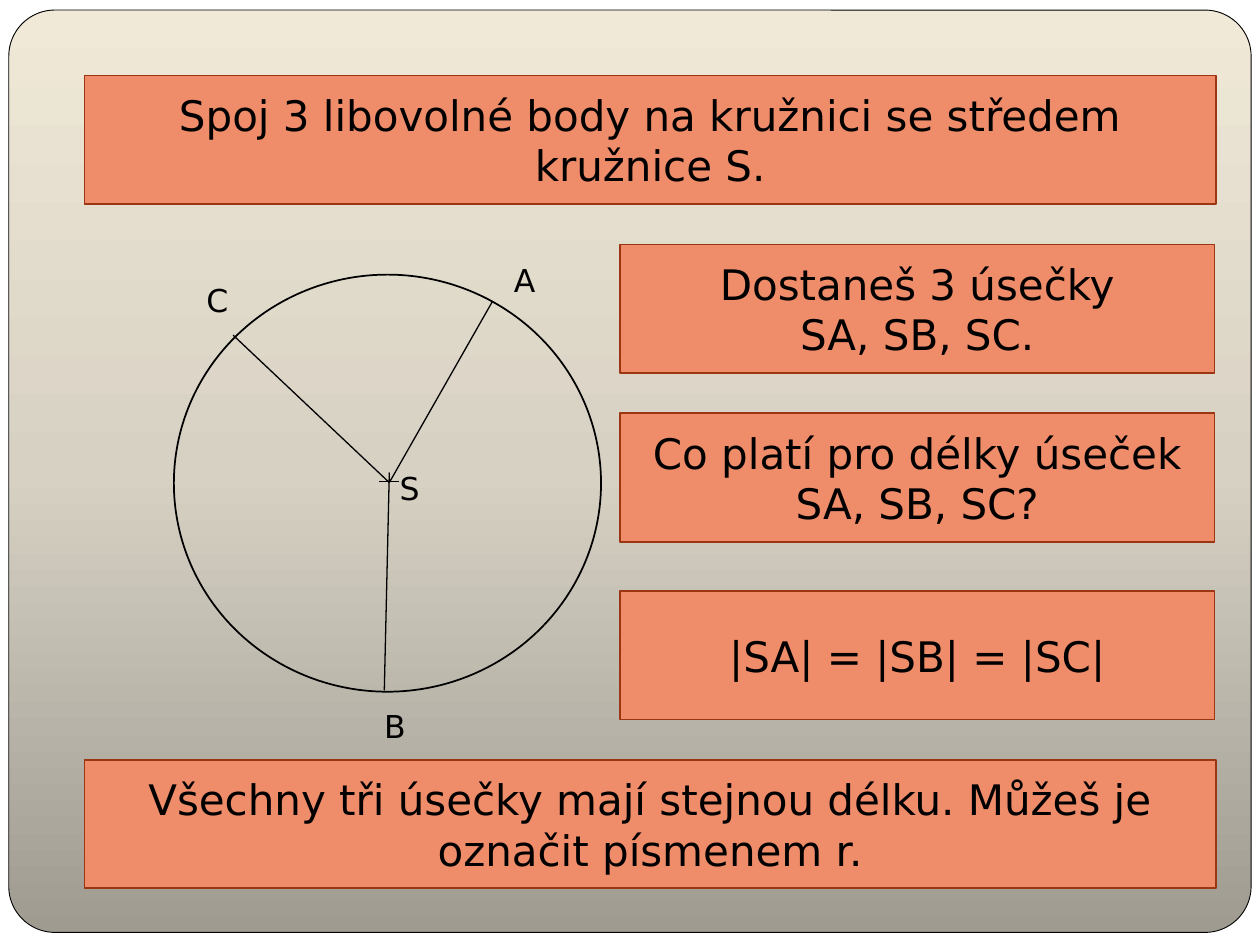
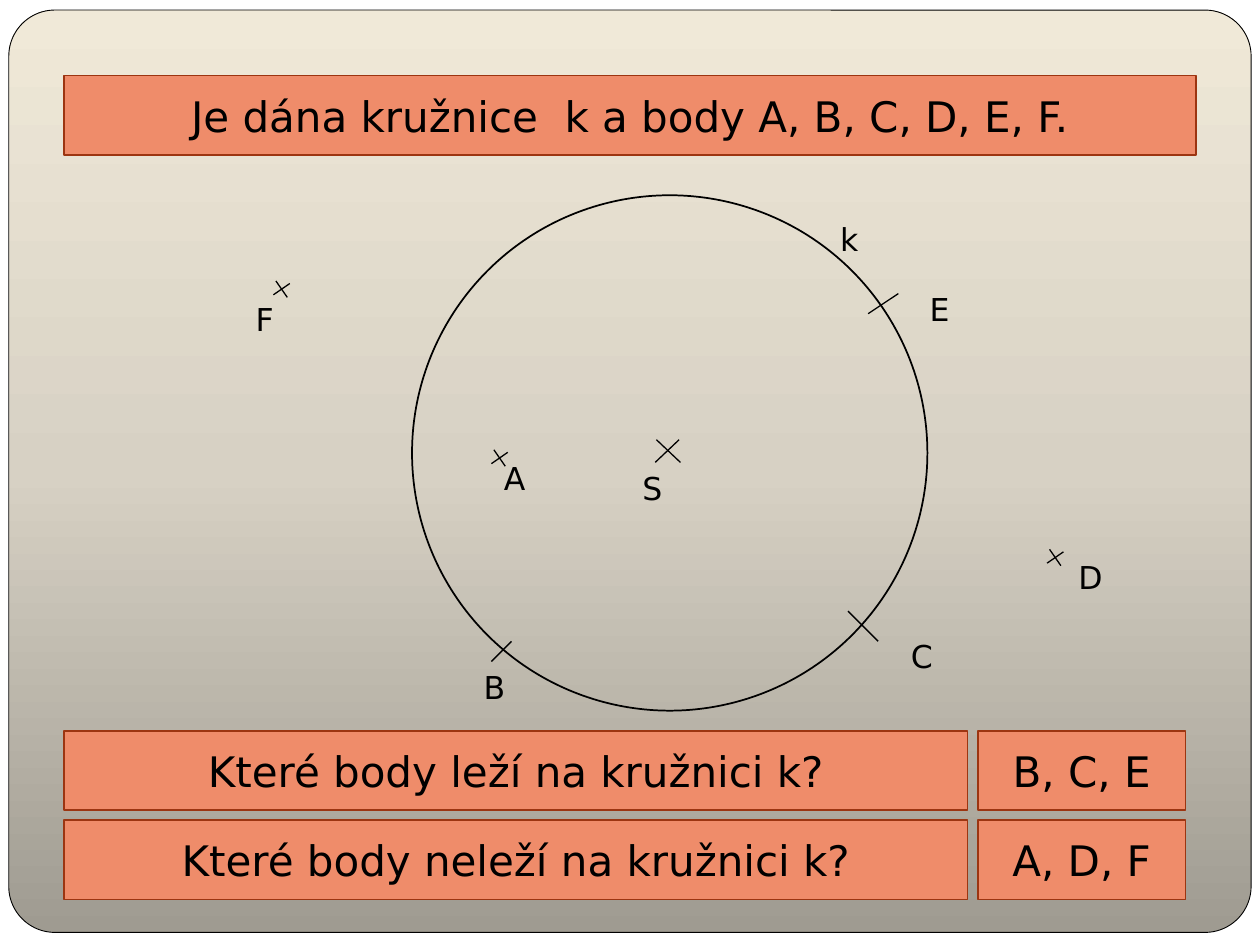
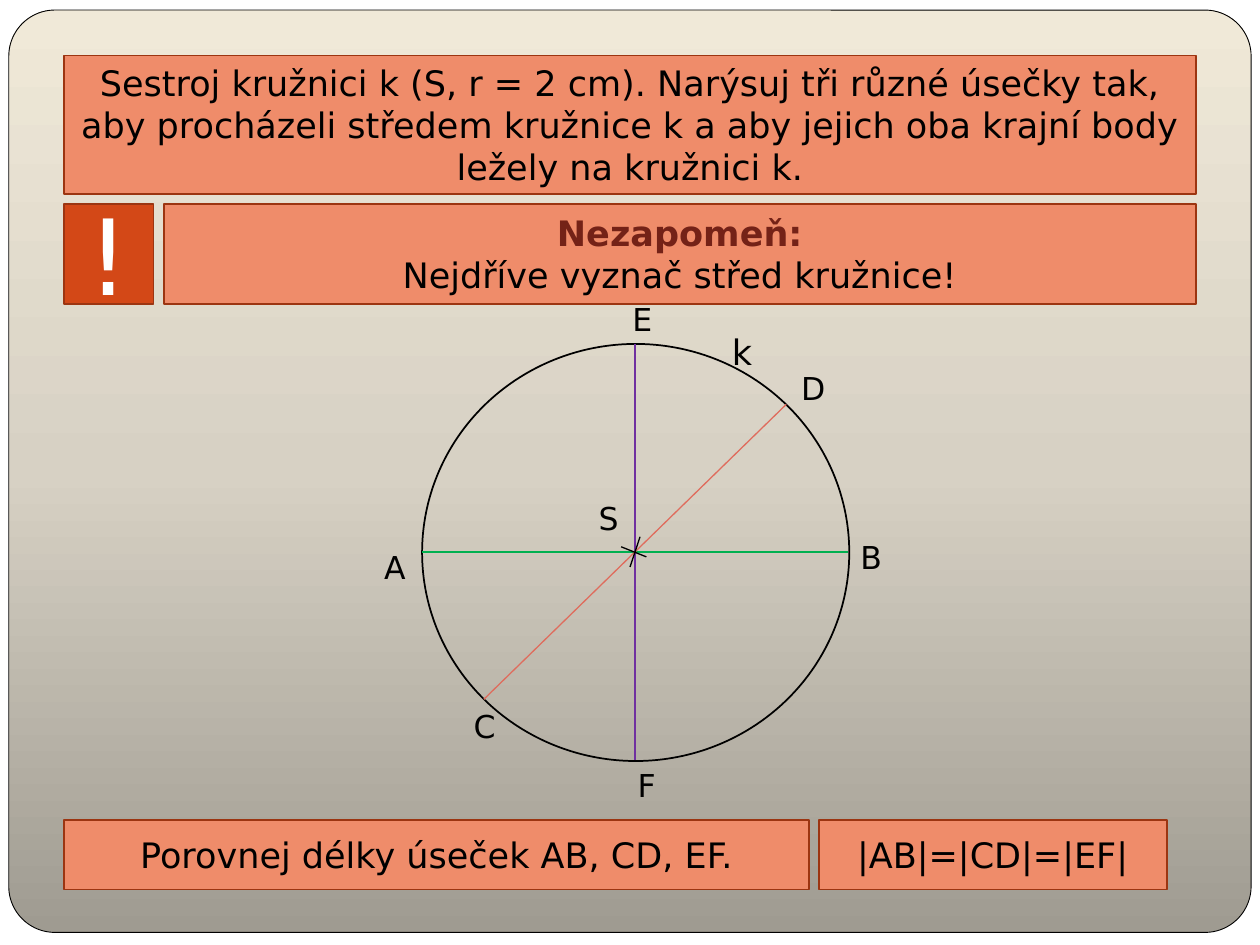
from copy import deepcopy
from typing import NamedTuple

from pptx import Presentation
from pptx.dml.color import RGBColor
from pptx.enum.shapes import MSO_CONNECTOR, MSO_SHAPE
from pptx.enum.text import MSO_ANCHOR, MSO_AUTO_SIZE, PP_ALIGN
from pptx.oxml.ns import qn
from pptx.oxml.xmlchemy import OxmlElement
from pptx.util import Inches, Pt

RECT, ROUND_RECT, OVAL = MSO_SHAPE.RECTANGLE, MSO_SHAPE.ROUNDED_RECTANGLE, MSO_SHAPE.OVAL
STRAIGHT = MSO_CONNECTOR.STRAIGHT
MIDDLE, CENTER = MSO_ANCHOR.MIDDLE, PP_ALIGN.CENTER
GROW = MSO_AUTO_SIZE.SHAPE_TO_FIT_TEXT

BLACK = RGBColor(0x00, 0x00, 0x00)
WHITE = RGBColor(0xFF, 0xFF, 0xFF)
SALMON = RGBColor(0xEF, 0x8C, 0x6A)
RUST = RGBColor(0x9C, 0x35, 0x11)
ORANGE = RGBColor(0xD3, 0x48, 0x17)
MAROON = RGBColor(0x74, 0x22, 0x17)
PURPLE = RGBColor(0x70, 0x30, 0xA0)
GREEN = RGBColor(0x00, 0xB0, 0x50)
RED = RGBColor(0xDF, 0x6C, 0x5D)
FRAME_STOPS = (
    (0, RGBColor(0x9F, 0x9B, 0x91)),
    (50, RGBColor(0xD7, 0xD1, 0xC4)),
    (100, RGBColor(0xF0, 0xE9, 0xD8)),
)

FONT = "DejaVu Sans"
LEFT, BAND_W = 0.51, 8.98


class Line(NamedTuple):
    text: str
    color: RGBColor = BLACK
    bold: bool = False


class Box(NamedTuple):
    x: float
    y: float
    w: float
    h: float
    lines: tuple[Line, ...]
    size: int = 24
    fill: RGBColor = SALMON


class Label(NamedTuple):
    text: str
    x: float
    y: float
    w: float = 0.31
    h: float = 0.4
    size: int = 18


class Segment(NamedTuple):
    x1: float
    y1: float
    x2: float
    y2: float
    color: RGBColor = BLACK


class Circle(NamedTuple):
    x: float
    y: float
    w: float = 3.39
    h: float = 3.31


def add_run(p, line: Line, size: int) -> None:
    r = p.add_run()
    r.text = line.text
    r.font.name = FONT
    r.font.size = Pt(size)
    r.font.bold = line.bold
    r.font.color.rgb = line.color


def add_outline(slide, kind, x: float, y: float, w: float, h: float,
                color: RGBColor, width: float):
    s = slide.shapes.add_shape(kind, Inches(x), Inches(y), Inches(w), Inches(h))
    s.shadow.inherit = False
    s.line.color.rgb = color
    s.line.width = Pt(width)
    return s


def draw_frame(slide) -> None:
    s = add_outline(slide, ROUND_RECT, 0.07, 0.08, 9.86, 7.32, BLACK, 0.5)
    s.adjustments[0] = 0.05
    s.fill.gradient()
    s.fill.gradient_angle = 90
    stop_list = next(s._element.iter(qn("a:gsLst")))
    stop_list.insert(1, deepcopy(stop_list[0]))
    for stop, (percent, color) in zip(s.fill.gradient_stops, FRAME_STOPS):
        stop.position = percent / 100
        stop.color.rgb = color


def draw_box(slide, box: Box) -> None:
    s = add_outline(slide, RECT, box.x, box.y, box.w, box.h, RUST, 1)
    s.fill.solid()
    s.fill.fore_color.rgb = box.fill
    tf = s.text_frame
    tf.word_wrap = True
    tf.vertical_anchor = MIDDLE
    for i, line in enumerate(box.lines):
        p = tf.add_paragraph() if i else tf.paragraphs[0]
        p.alignment = CENTER
        add_run(p, line, box.size)


def draw_circle(slide, circle: Circle) -> None:
    add_outline(slide, OVAL, *circle, BLACK, 1).fill.background()


def draw_segment(slide, seg: Segment) -> None:
    c = slide.shapes.add_connector(
        STRAIGHT, Inches(seg.x1), Inches(seg.y1), Inches(seg.x2), Inches(seg.y2))
    c.line.color.rgb = seg.color
    c.line.width = Pt(0.75)
    c._element.spPr.append(OxmlElement("a:effectLst"))


def draw_label(slide, label: Label) -> None:
    s = slide.shapes.add_textbox(
        Inches(label.x), Inches(label.y), Inches(label.w), Inches(label.h))
    tf = s.text_frame
    tf.word_wrap = True
    tf.auto_size = GROW
    add_run(tf.paragraphs[0], Line(label.text), label.size)


def cross(x: float, y: float) -> list[Segment]:
    """Slightly turned cross marking a point off the circle."""
    return [Segment(x - 0.04, y - 0.07, x + 0.05, y + 0.06),
            Segment(x - 0.06, y + 0.04, x + 0.07, y - 0.05)]


def build_slide(prs, circle: Circle, segments: list[Segment],
                labels: list[Label], boxes: list[Box]) -> None:
    slide = prs.slides.add_slide(prs.slide_layouts[6])
    slide.background.fill.solid()
    slide.background.fill.fore_color.rgb = WHITE
    draw_frame(slide)
    draw_circle(slide, circle)
    for box in boxes:
        draw_box(slide, box)
    for seg in segments:
        draw_segment(slide, seg)
    for label in labels:
        draw_label(slide, label)


def radii_slide(prs) -> None:
    def wide(y: float, text: str) -> Box:
        return Box(0.67, y, BAND_W, 1.02, (Line(text),))

    def side(y: float, *texts: str) -> Box:
        return Box(4.92, y, 4.72, 1.02, tuple(Line(t) for t in texts))

    build_slide(
        prs, Circle(1.38, 2.18),
        [Segment(1.85, 2.66, 3.09, 3.83),
         Segment(3.09, 3.83, 3.91, 2.39),
         Segment(3.05, 5.48, 3.09, 3.75),
         Segment(3.01, 3.82, 3.17, 3.82)],
        [Label("S", 3.11, 3.67, 0.16), Label("A", 3.98, 2.02),
         Label("B", 2.95, 5.56, 0.39), Label("C", 1.54, 2.18)],
        [wide(0.6, "Spoj 3 libovolné body na kružnici se středem kružnice S."),
         side(1.94, "Dostaneš 3 úsečky", "SA, SB, SC."),
         side(3.28, "Co platí pro délky úseček", "SA, SB, SC?"),
         side(4.69, "|SA| = |SB| = |SC|"),
         wide(6.03, "Všechny tři úsečky mají stejnou délku. Můžeš je označit písmenem r.")])


def points_slide(prs) -> None:
    questions = (("Které body leží na kružnici k?", "B, C, E"),
                 ("Které body neleží na kružnici k?", "A, D, F"))
    boxes = [Box(LEFT, 0.6, BAND_W, 0.63,
                 (Line("Je dána kružnice  k a body A, B, C, D, E, F."),))]
    for i, (question, answer) in enumerate(questions):
        y = 5.8 + 0.71 * i
        boxes += [Box(LEFT, y, 7.17, 0.63, (Line(question),)),
                  Box(7.76, y, 1.65, 0.63, (Line(answer),))]

    build_slide(
        prs, Circle(3.27, 1.55, 4.09, 4.09),
        [Segment(5.39, 3.49, 5.2, 3.67),
         Segment(5.21, 3.49, 5.4, 3.67),
         # Ticks at E, C and B
         Segment(7.13, 2.33, 6.89, 2.49),
         Segment(6.73, 4.85, 6.97, 5.09),
         Segment(4.06, 5.09, 3.9, 5.25),
         # Crosses at A, D and F
         *cross(3.96, 3.64), *cross(8.37, 4.43), *cross(2.23, 2.3)],
        [Label("S", 5, 3.67, 0.39), Label("k", 6.57, 1.7),
         Label("D", 8.46, 4.38, 0.24), Label("E", 7.28, 2.25),
         Label("C", 7.13, 5.01), Label("B", 3.74, 5.25, 0.39),
         Label("A", 3.9, 3.59), Label("F", 1.93, 2.33)],
        boxes)


def diameters_slide(prs) -> None:
    build_slide(
        prs, Circle(3.35, 2.73),
        [Segment(5.04, 2.73, 5.04, 6.03, PURPLE),
         Segment(3.35, 4.38, 6.73, 4.38, GREEN),
         Segment(6.24, 3.21, 3.84, 5.55, RED),
         # Cross at the centre
         Segment(4.93, 4.34, 5.13, 4.42),
         Segment(5.08, 4.26, 5, 4.5)],
        [Label("k", 5.71, 2.57, 0.55, 0.44, 20),
         Label("E", 4.92, 2.33, 0.24), Label("F", 5, 6.03, 0.16),
         Label("C", 3.66, 5.56), Label("D", 6.26, 2.88, 0.24),
         Label("A", 2.95, 4.3, 0.39), Label("B", 6.73, 4.22, 0.24),
         Label("S", 4.69, 3.91, 0.16)],
        [Box(LEFT, 0.44, BAND_W, 1.1,
             (Line("Sestroj kružnici k (S, r = 2 cm). Narýsuj tři různé úsečky tak, "
                   "aby procházeli středem kružnice k a aby jejich oba krajní body "
                   "ležely na kružnici k."),), 20),
         Box(LEFT, 1.62, 0.71, 0.79, (Line("!", WHITE),), 60, ORANGE),
         Box(1.3, 1.62, 8.19, 0.79,
             (Line("Nezapomeň:", MAROON, True),
              Line("Nejdříve vyznač střed kružnice!")), 20),
         Box(LEFT, 6.51, 5.91, 0.55, (Line("Porovnej délky úseček AB, CD, EF."),), 20),
         Box(6.5, 6.51, 2.76, 0.55, (Line("|AB|=|CD|=|EF|"),), 20)])


def main() -> None:
    prs = Presentation()
    prs.slide_width, prs.slide_height = Inches(10), Inches(7.5)
    radii_slide(prs)
    points_slide(prs)
    diameters_slide(prs)
    prs.save("out.pptx")


if __name__ == "__main__":
    main()
